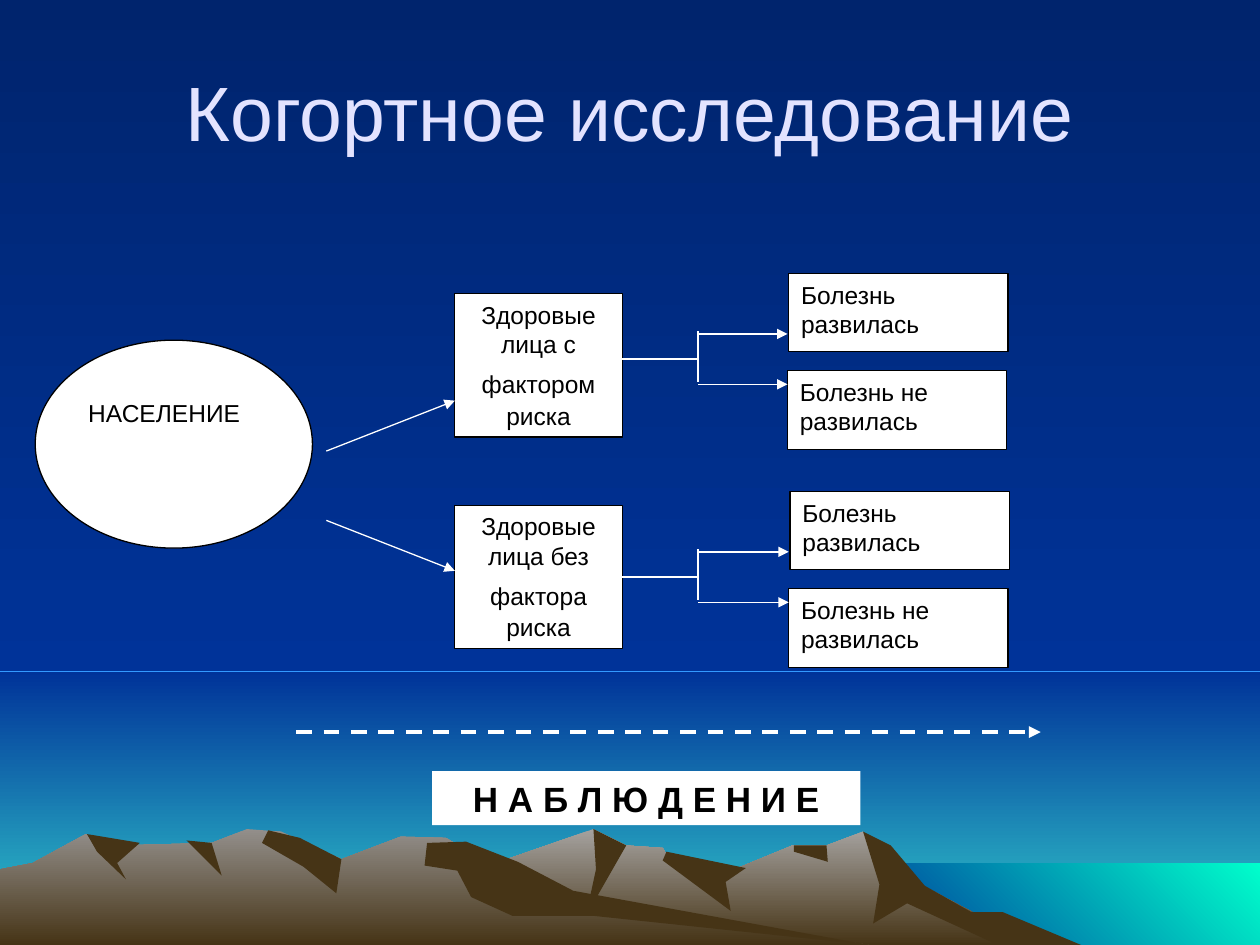
from pptx import Presentation
from pptx.dml.color import RGBColor
from pptx.enum.dml import MSO_LINE
from pptx.enum.shapes import MSO_CONNECTOR, MSO_SHAPE
from pptx.enum.text import MSO_ANCHOR, PP_ALIGN
from pptx.oxml.ns import qn
from pptx.util import Pt
from lxml.etree import SubElement

PX = 9144  # EMU in one px, 100 px to the inch
W, H = 1000, 750
HORIZON = 533

THEME = dict(
    font="Arial", bg="3399FF", title="E3E3FF", ink="000000", paper="FFFFFF",
    rock="463416", sky=("00246D", "003399"), horizon=("003399", "33CCCC"),
    sea=("003399", "00FFCC"), east=("A5A29F", "463416"), west=("938F8B", "463416"),
    title_size=44, label_size=20, body_size=14, thin=0.75, thick=2.25,
)

# Content
TITLE = "Когортное исследование"
POPULATION = "НАСЕЛЕНИЕ"
OBSERVATION = "Н А Б Л Ю Д Е Н И Е"
OUTCOMES = ["Болезнь развилась", "Болезнь не развилась"]
COHORTS = [  # text, box top, height of the branch
    ("Здоровые лица с фактором", 233, 285),
    ("Здоровые лица без фактора", 401, 458),
]
RISK = "риска"

# Landscape: rectangles as (fill, box, angle), then outlines as (fill, points)
BACKDROP = [
    ("horizon", (0, HORIZON, W, H - HORIZON), 270),
    ("sky", (0, 0, W, HORIZON), 270),
    ("sea", (683, 685, W - 683, H - 685), 45),
]
MOUNTAINS = [
    ("east", [(258, H), (327, 709), (405, 681), (471, 658), (497, 671), (526, 673),
              (536, 690), (566, 697), (629, 671), (656, 671), (685, 660), (723, 698),
              (821, H)]),
    ("rock", [(685, 660), (707, 671), (734, 703), (771, 724), (796, 724), (858, H),
              (792, H), (720, 717), (693, 733), (698, 702)]),
    ("rock", [(471, 658), (497, 671), (465, 727), (473, 690)]),
    ("rock", [(529, 676), (592, 689), (576, 700), (580, 723), (526, 683)]),
    ("rock", [(630, 671), (656, 671), (657, 684), (630, 676)]),
    ("west", [(0, H), (0, 690), (26, 685), (68, 662), (94, 671), (168, 669),
              (196, 658), (223, 660), (271, 682), (318, 664), (354, 665), (432, 712),
              (690, H)]),
    ("rock", [(213, 659), (238, 665), (271, 682), (267, 709), (241, 688), (208, 669)]),
    ("rock", [(339, 669), (370, 668), (411, 684), (455, 707), (690, H), (472, 727),
              (407, 727), (374, 712), (363, 691), (337, 687)]),
    ("rock", [(148, 667), (168, 669), (176, 695)]),
    ("rock", [(69, 662), (111, 669), (93, 685), (100, 698), (77, 676)]),
]


def px(*values):
    return [round(v * PX) for v in values]


def rgb(name):
    return RGBColor.from_string(THEME[name])


def paint(sp, name, angle=270, line=None):
    """Fill with a theme colour, or a gradient where the theme holds a pair."""
    sp.shadow.inherit = False
    if isinstance(THEME[name], tuple):
        sp.fill.gradient()
        sp.fill.gradient_angle = angle
        for stop, colour in zip(sp.fill.gradient_stops, THEME[name]):
            stop.color.rgb = RGBColor.from_string(colour)
    else:
        sp.fill.solid()
        sp.fill.fore_color.rgb = rgb(name)
    if line:
        sp.line.color.rgb = rgb(line)
        sp.line.width = Pt(THEME["thin"])
    else:
        sp.line.fill.background()
    return sp


def write(sp, *texts, size="body_size", color="ink", bold=False,
          align=PP_ALIGN.LEFT, anchor=MSO_ANCHOR.TOP, top=5):
    """Write one paragraph; several texts are joined by a larger space."""
    tf = sp.text_frame
    tf.word_wrap = True
    tf.vertical_anchor = anchor
    tf.margin_left, tf.margin_top, tf.margin_right, tf.margin_bottom = px(10, top, 10, 5)
    p = tf.paragraphs[0]
    p.alignment = align
    runs = [(texts[0], size)]
    for text in texts[1:]:
        runs += [(" ", "label_size"), (text, size)]
    for text, run_size in runs:
        r = p.add_run()
        r.text = text
        r.font.name, r.font.size = THEME["font"], Pt(THEME[run_size])
        r.font.bold, r.font.color.rgb = bold, rgb(color)


def block(s, box, *texts, shape=MSO_SHAPE.RECTANGLE, line="ink", **fmt):
    sp = paint(s.shapes.add_shape(shape, *px(*box)), "paper", line=line)
    write(sp, *texts, **fmt)
    return sp


def connect(s, x1, y1, x2, y2, arrow=True, width="thin", dash=None):
    c = s.shapes.add_connector(MSO_CONNECTOR.STRAIGHT, *px(x1, y1, x2, y2))
    c.line.color.rgb = rgb("paper")
    c.line.width = Pt(THEME[width])
    if dash:
        c.line.dash_style = dash
    if arrow:
        SubElement(c.line._get_or_add_ln(), qn("a:tailEnd"), type="triangle")
    SubElement(c.element.spPr, qn("a:effectLst"))
    return c


prs = Presentation()
prs.slide_width, prs.slide_height = px(W, H)
s = prs.slides.add_slide(prs.slide_layouts[5])
s.background.fill.solid()
s.background.fill.fore_color.rgb = rgb("bg")

# Landscape
for name, box, angle in BACKDROP:
    paint(s.shapes.add_shape(MSO_SHAPE.RECTANGLE, *px(*box)), name, angle)
for name, points in MOUNTAINS:
    outline = s.shapes.build_freeform(*points[0], scale=PX)
    outline.add_line_segments(points[1:], close=True)
    paint(outline.convert_to_shape(), name)

# Title, brought in front of the landscape
title = s.shapes.title
s.shapes.element.append(title.element)
title.left, title.top, title.width, title.height = px(50, 25, 900, 125)
write(title, TITLE, size="title_size", color="title",
      align=PP_ALIGN.CENTER, anchor=MSO_ANCHOR.MIDDLE)

# Population, cohorts and their outcomes
block(s, (28, 270, 220, 165), POPULATION, shape=MSO_SHAPE.OVAL, top=22)
BOX_X, BOX_W, BOX_H, FORK_X, OUT_X = 361, 133, 114, 554, 625
for i, (text, top, mid) in enumerate(COHORTS):
    cohort = block(s, (BOX_X, top, BOX_W, BOX_H), text, RISK, align=PP_ALIGN.CENTER)
    start = 358 + 55 * i
    connect(s, 259, start, BOX_X, start - 40 + 80 * i)
    stem = connect(s, FORK_X, mid, BOX_X + BOX_W, mid, arrow=False)
    if mid == top + BOX_H / 2:
        stem.end_connect(cohort, 3)
    connect(s, FORK_X, mid - 22, FORK_X, mid + 18, arrow=False)
    for j, outcome in enumerate(OUTCOMES):
        block(s, (OUT_X + 1 + i - j, mid - 68 + 77 * j, 174, 62 + j), outcome)
        y = mid - 20 + 40 * j
        connect(s, FORK_X, y, OUT_X + i, y)

# Observation over time
connect(s, 235, 581, 826, 581, width="thick", dash=MSO_LINE.DASH)
block(s, (343, 612, 340, 43), OBSERVATION, line=None, size="label_size",
      bold=True, align=PP_ALIGN.CENTER)

prs.save("out.pptx")
